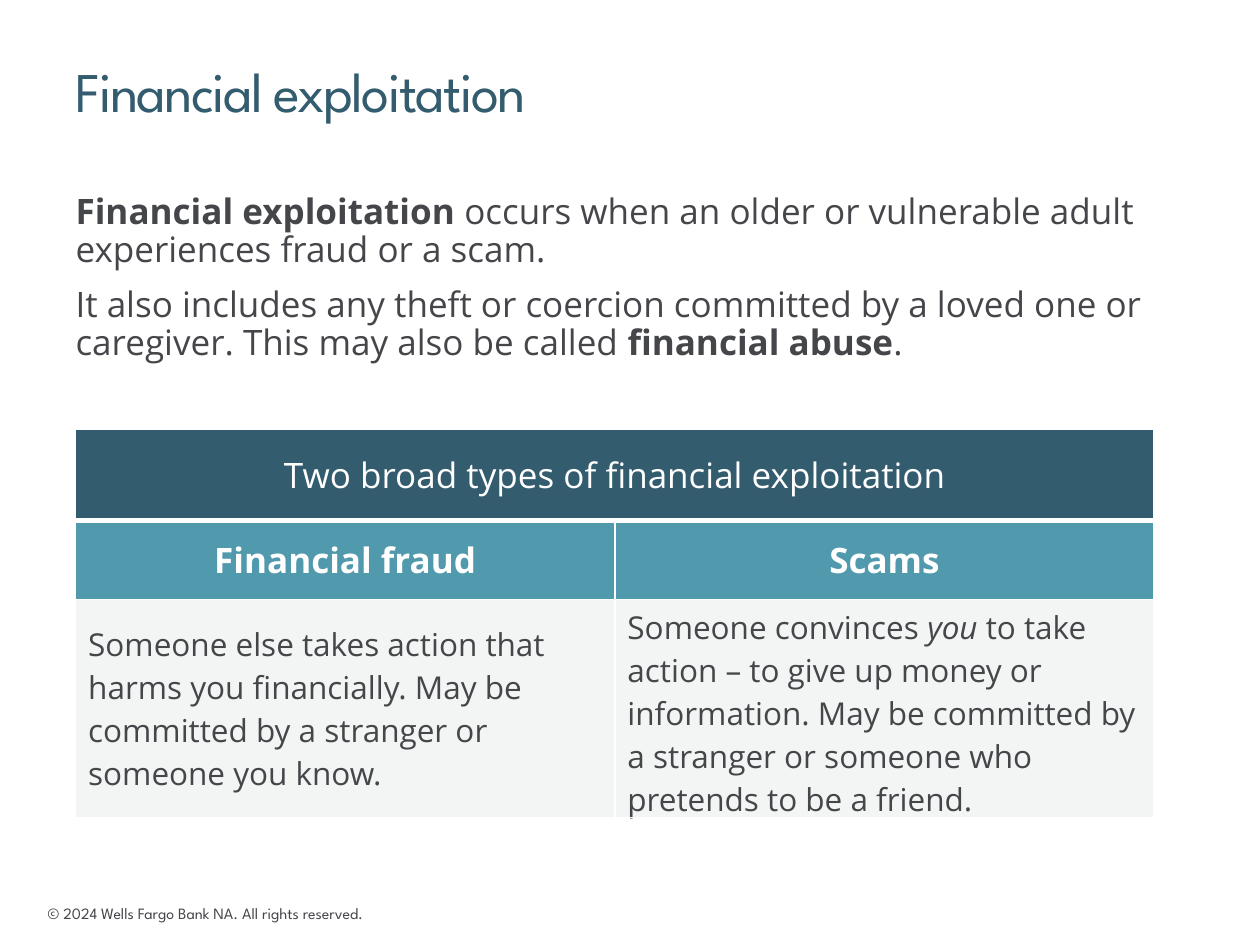
from lxml import etree
from pptx import Presentation, util as u
from pptx.dml.color import RGBColor
from pptx.enum import text
from pptx.oxml.ns import qn

COLORS = {"navy": "345C6F", "teal": "5199AD", "pale": "F2F5F3",
          "ink": "44464A", "white": "FFFFFF"}
HEADING, BODY = "League Spartan", "Open Sans"

# Content: each run is (words, style), style "" or "b" or "i"
TITLE = [("Financial exploitation", "")]
DEFINITION = [
    [("Financial exploitation ", "b"),
     ("occurs when an older or vulnerable adult experiences fraud or a scam.", "")],
    [("It also includes any theft or coercion committed by a loved one or "
      "caregiver. This may also be called ", ""),
     ("financial abuse", "b"), (".", "")],
]
COPYRIGHT = [("© 2024 Wells Fargo Bank NA. All rights reserved.", "")]
TYPES = [
    # row height, fill, text colour, size, alignment, cells
    (0.72, "navy", "white", 20, "CENTER",
     [[("Two broad types of financial exploitation", "")]]),
    (0.63, "teal", "white", 20, "CENTER",
     [[("Financial fraud", "b")], [("Scams", "b")]]),
    (1.73, "pale", "ink", 18, "LEFT",
     [[("Someone else takes action that harms you financially. May be "
        "committed by a stranger or someone you know.", "")],
      [("Someone convinces ", ""), ("you", "i"),
       (" to take action – to give up money or information. May be committed "
        "by a stranger or someone who pretends to be a friend.", "")]]),
]

# Layout in inches
WIDTH, HEIGHT = 10, 7.5
MARGIN = 0.06 * WIDTH
TEXT_WIDTH = WIDTH - 2 * MARGIN
TABLE_TOP, COLUMN, COLUMNS = 3.41, 4.28, 2


def color(name):
    return RGBColor.from_string(COLORS[name])


def add_runs(paragraph, runs, font, size, ink):
    for words, style in runs:
        run = paragraph.add_run()
        run.text = words
        run.font.name, run.font.size = font, u.Pt(size)
        run.font.bold, run.font.italic = style == "b", style == "i"
        run.font.color.rgb = color(ink)


def add_box(slide, left, top, width, height, inset=True, wrap=True):
    frame = slide.shapes.add_textbox(
        *map(u.Inches, (left, top, width, height))).text_frame
    frame.word_wrap = wrap
    if not inset:
        frame.margin_left = frame.margin_right = 0
        frame.margin_top = frame.margin_bottom = 0
    return frame


def set_borders(cell, widths):
    properties = cell._tc.get_or_add_tcPr()
    for index, (side, points) in enumerate(widths.items()):
        line = etree.Element(qn(f"a:ln{side}"), w=str(u.Pt(points)))
        fill = etree.SubElement(line, qn("a:solidFill"))
        etree.SubElement(fill, qn("a:srgbClr"), val=COLORS["white"])
        properties.insert(index, line)


prs = Presentation()
prs.slide_width, prs.slide_height = u.Inches(WIDTH), u.Inches(HEIGHT)
slide = prs.slides.add_slide(prs.slide_layouts[6])

# Copyright line
footer = add_box(slide, 0.28, 0.95 * HEIGHT, 3.05, 0.25, wrap=False)
footer.auto_size = text.MSO_AUTO_SIZE.SHAPE_TO_FIT_TEXT
add_runs(footer.paragraphs[0], COPYRIGHT, HEADING, 9, "ink")

# Title, slightly tightened
title = add_box(slide, MARGIN, 0.42, TEXT_WIDTH, 0.97, inset=False).paragraphs[0]
title.line_spacing = 1.05
add_runs(title, TITLE, HEADING, 32, "navy")
title.runs[0].font._element.set("spc", "-100")

# Definition
definition = add_box(slide, MARGIN, 1.54, TEXT_WIDTH, 1.71, inset=False)
for index, runs in enumerate(DEFINITION):
    paragraph = definition.add_paragraph() if index else definition.paragraphs[0]
    paragraph.line_spacing = 0.9
    paragraph.space_before = u.Pt(10 if index else 0)
    add_runs(paragraph, runs, BODY, 20, "ink")

# Table of the two types
table = slide.shapes.add_table(
    len(TYPES), COLUMNS, u.Inches(MARGIN), u.Inches(TABLE_TOP),
    u.Inches(COLUMN * COLUMNS), u.Inches(sum(row[0] for row in TYPES))).table
table.first_row = table.horz_banding = False
for column in table.columns:
    column.width = u.Inches(COLUMN)
table.cell(0, 0).merge(table.cell(0, COLUMNS - 1))

for r, (height, fill, ink, size, align, contents) in enumerate(TYPES):
    table.rows[r].height = u.Inches(height)
    for c in range(COLUMNS):
        cell = table.cell(r, c)
        cell.fill.solid()
        cell.fill.fore_color.rgb = color(fill)
        set_borders(cell, {"L": 1, "R": 1, "T": 3 if r == 1 else 1,
                           "B": 3 if r == 0 else 1})
        cell.vertical_anchor = text.MSO_ANCHOR.MIDDLE
        if c < len(contents):
            paragraph = cell.text_frame.paragraphs[0]
            paragraph.alignment = text.PP_ALIGN[align]
            add_runs(paragraph, contents[c], BODY, size, ink)

prs.save("out.pptx")
